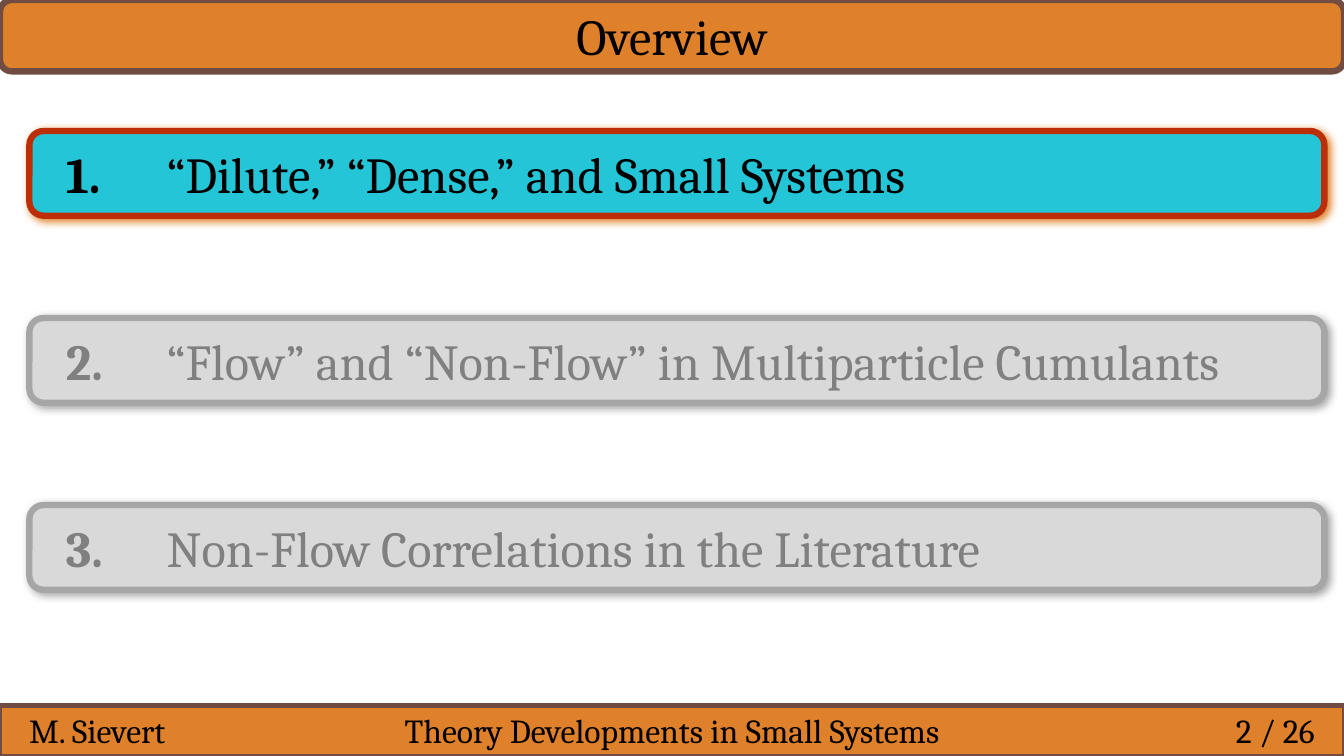
from dataclasses import dataclass

from lxml.etree import SubElement
from pptx import Presentation
from pptx.dml.color import RGBColor
from pptx.enum.shapes import MSO_SHAPE
from pptx.enum.text import PP_ALIGN
from pptx.oxml.ns import qn
from pptx.util import Pt


@dataclass(frozen=True)
class Theme:
    font: str = "Cambria"
    large: int = 36
    small: int = 24
    ink: str = "000000"
    bar: str = "DF802A"
    edge: str = "704C42"
    live: tuple = ("23C5D6", "BB2E07", "DF802A", "000000")  # fill, line, shade, text
    dim: tuple = ("D9D9D9", "A6A6A6", "A6A6A6", "808080")


THEME = Theme()
WIDTH, HEIGHT = 960, 540
HEAD, FOOT = 51, 36
LEFT, TOP, STEP = 21, 93.6, 133.6
TAB = 72

TOPICS = (
    ("“Dilute,” “Dense,” and Small Systems", THEME.live),
    ("“Flow” and “Non-Flow” in Multiparticle Cumulants", THEME.dim),
    ("Non-Flow Correlations in the Literature", THEME.dim),
)


def add_box(slide, kind, area, fill, line, weight):
    box = slide.shapes.add_shape(kind, *map(Pt, area))
    box.shadow.inherit = False
    box.fill.solid()
    box.fill.fore_color.rgb = RGBColor.from_string(fill)
    box.line.color.rgb = RGBColor.from_string(line)
    box.line.width = Pt(weight)
    return box


def add_shade(box, color):
    effects = box._element.spPr.find(qn("a:effectLst"))
    shade = SubElement(effects, qn("a:outerShdw"), blurRad=str(Pt(6)),
                       dist=str(Pt(1.5)), dir="2700000", rotWithShape="0")
    SubElement(shade, qn("a:srgbClr"), val=color)


def add_text(slide, area, runs, size, color, align=PP_ALIGN.LEFT):
    frame = slide.shapes.add_textbox(*map(Pt, area)).text_frame
    frame.word_wrap = True
    para = frame.paragraphs[0]
    para.alignment = align
    tabs = SubElement(para._p.get_or_add_pPr(), qn("a:tabLst"))
    SubElement(tabs, qn("a:tab"), pos=str(Pt(TAB)), algn="l")
    for text, bold in runs:
        run = para.add_run()
        run.text = text
        run.font.name = THEME.font
        run.font.size = Pt(size)
        run.font.bold = bold
        run.font.color.rgb = RGBColor.from_string(color)


def add_head(slide, title):
    area = (0, 0, WIDTH, HEAD)
    add_box(slide, MSO_SHAPE.ROUNDED_RECTANGLE, area, THEME.bar, THEME.edge, 4.5)
    add_text(slide, area, [(title, False)], THEME.large, THEME.ink, PP_ALIGN.CENTER)


def add_foot(slide, parts):
    top = HEIGHT - FOOT
    add_box(slide, MSO_SHAPE.RECTANGLE, (0, top, WIDTH, FOOT), THEME.bar, THEME.edge, 3)
    for text, left, width, align in parts:
        area = (left, top - 0.4, width, FOOT)
        add_text(slide, area, [(text, False)], THEME.small, THEME.ink, align)


def add_topic(slide, index, title, colors):
    fill, line, shade, ink = colors
    top = TOP + index * STEP
    area = (LEFT, top, 925, 60.5)
    box = add_box(slide, MSO_SHAPE.ROUNDED_RECTANGLE, area, fill, line, 4.5)
    add_shade(box, shade)
    runs = [(f"{index + 1}.", True), (f"\t{title}", False)]
    add_text(slide, (40, top + 4.8, 889, 51), runs, THEME.large, ink)


def main():
    deck = Presentation()
    deck.slide_width, deck.slide_height = Pt(WIDTH), Pt(HEIGHT)
    slide = deck.slides.add_slide(deck.slide_layouts[6])

    # Title bar and footer
    add_head(slide, "Overview")
    add_foot(slide, (
        ("M. Sievert", 13.7, 121, PP_ALIGN.LEFT),
        ("Theory Developments in Small Systems", 270, 420, PP_ALIGN.CENTER),
        ("2 / 26", 846.7, 99.4, PP_ALIGN.RIGHT),
    ))

    # Agenda, with the current topic lit
    for index, (title, colors) in enumerate(TOPICS):
        add_topic(slide, index, title, colors)

    deck.save("out.pptx")


if __name__ == "__main__":
    main()
